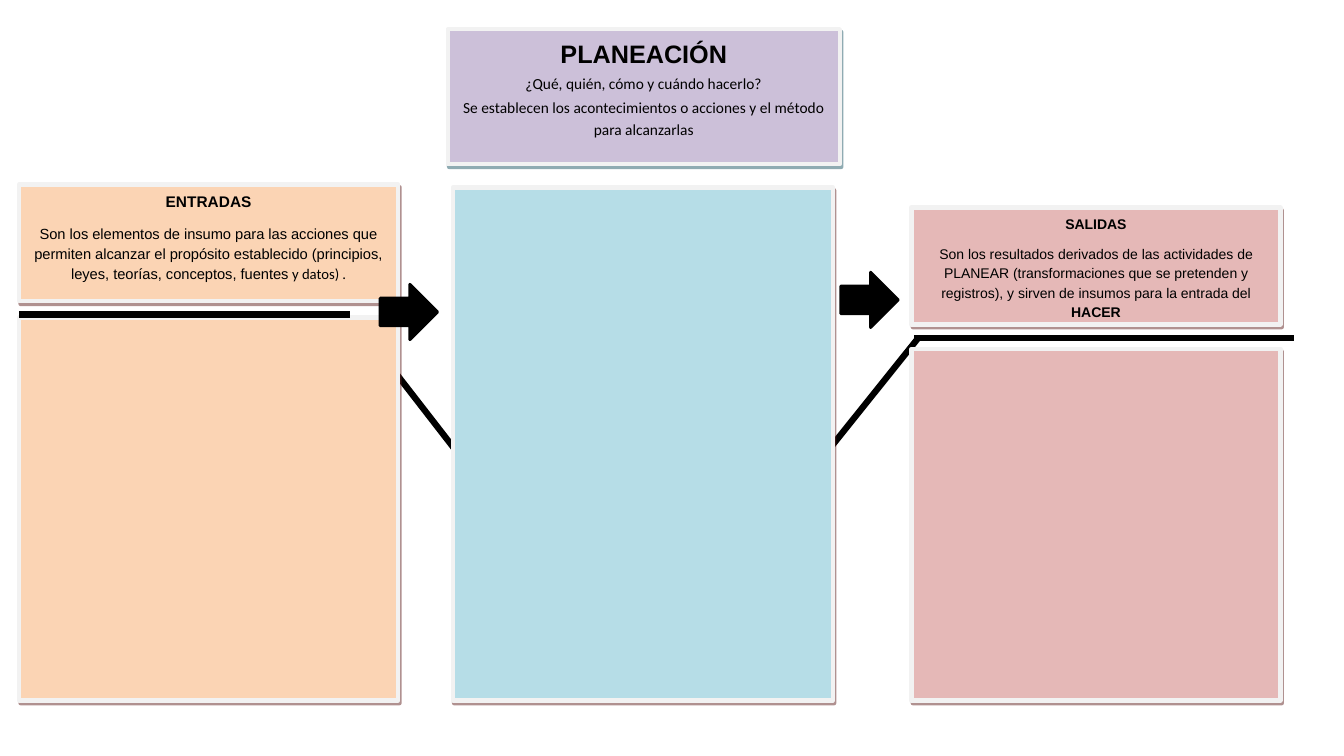
from dataclasses import dataclass

import pptx
import pptx.dml.color
import pptx.enum.shapes
import pptx.enum.text
import pptx.oxml
import pptx.oxml.ns
import pptx.util

Inches = pptx.util.Inches
RGBColor = pptx.dml.color.RGBColor
Kind = pptx.enum.shapes.MSO_SHAPE

BLACK = RGBColor(0x00, 0x00, 0x00)
FRAME = RGBColor(0xF2, 0xF2, 0xF2)
PEACH = RGBColor(0xFB, 0xD4, 0xB4)
ROSE = RGBColor(0xE5, 0xB8, 0xB7)
LILAC = RGBColor(0xCC, 0xC0, 0xD9)
AQUA = RGBColor(0xB6, 0xDD, 0xE7)
MAROON = RGBColor(0x63, 0x24, 0x23)
TEAL = RGBColor(0x20, 0x58, 0x67)


@dataclass(frozen=True)
class Run:
    text: str
    size: float
    bold: bool = False
    font: str = "Arial"


@dataclass(frozen=True)
class Para:
    runs: tuple[Run, ...]
    before: float = 0


@dataclass(frozen=True)
class Box:
    left: float
    top: float
    width: float
    height: float
    fill: RGBColor
    shade: RGBColor = MAROON
    paras: tuple[Para, ...] = ()


@dataclass(frozen=True)
class Line:
    x1: float
    y1: float
    x2: float
    y2: float


@dataclass(frozen=True)
class Arrow:
    left: float
    top: float


HEADS = (
    Box(0.19, 1.83, 3.76, 1.16, PEACH, paras=(
        Para((Run("ENTRADAS", 11, True),)),
        Para((
            Run("Son los elementos de insumo para las acciones que permiten "
                "alcanzar el propósito establecido (principios, leyes, "
                "teorías, conceptos, fuentes", 10.5),
            Run(" y datos) .", 10.5, font="Calibri"),
        ), 8),
    )),
    Box(9.04, 2.06, 3.66, 1.16, ROSE, paras=(
        Para((Run("SALIDAS", 10, True),)),
        Para((
            Run("Son los resultados derivados de las actividades de PLANEAR "
                "(transformaciones que se pretenden y registros), y sirven "
                "de insumos para la entrada del ", 10),
            Run("HACER", 10, True),
        ), 8),
    )),
    Box(4.44, 0.29, 3.89, 1.34, LILAC, TEAL, (
        Para((Run("PLANEACIÓN", 18, True),)),
        Para((Run("¿Qué, quién, cómo y cuándo hacerlo?", 11,
                  font="Calibri"),), 2),
        Para((Run("Se establecen los acontecimientos o acciones y el método "
                  "para alcanzarlas", 11, font="Calibri"),), 2),
    )),
)
LINKS = (Line(6.3, 6.86, 9.11, 3.35), Line(3.56, 3.23, 6.28, 6.74))
PANELS = (
    Box(0.19, 3.15, 3.76, 3.8, PEACH),
    Box(4.49, 1.86, 3.77, 5.09, AQUA),
    Box(9.04, 3.46, 3.66, 3.49, ROSE),
)
RULES = (Line(0.19, 3.12, 3.47, 3.12), Line(9.07, 3.35, 12.83, 3.35))
ARROWS = (Arrow(3.77, 2.82), Arrow(8.34, 2.7))


def add_shade(shape, color: RGBColor) -> None:
    shape.shadow.inherit = False
    effects = shape._element.spPr.find(pptx.oxml.ns.qn("a:effectLst"))
    effects.append(pptx.oxml.parse_xml(
        f'<a:outerShdw {pptx.oxml.ns.nsdecls("a")} blurRad="0" '
        f'dist="{pptx.util.Pt(2.2)}" dir="3780000" algn="ctr" '
        f'rotWithShape="0"><a:srgbClr val="{color}">'
        '<a:alpha val="49000"/></a:srgbClr></a:outerShdw>'))


def write(frame, paras: tuple[Para, ...]) -> None:
    frame.word_wrap = True
    frame.vertical_anchor = pptx.enum.text.MSO_ANCHOR.TOP
    for index, para in enumerate(paras):
        item = frame.add_paragraph() if index else frame.paragraphs[0]
        item.alignment = pptx.enum.text.PP_ALIGN.CENTER
        item.line_spacing = 1.15
        item.space_before = pptx.util.Pt(para.before)
        for part in para.runs:
            run = item.add_run()
            run.text = part.text
            run.font.size = pptx.util.Pt(part.size)
            run.font.bold = part.bold
            run.font.name = part.font
            run.font.color.rgb = BLACK


def paint(shape, fill: RGBColor, edge: RGBColor, width: float) -> None:
    shape.fill.solid()
    shape.fill.fore_color.rgb = fill
    shape.line.color.rgb = edge
    shape.line.width = pptx.util.Pt(width)


def draw_box(slide, box: Box) -> None:
    shape = slide.shapes.add_shape(
        Kind.RECTANGLE, Inches(box.left), Inches(box.top),
        Inches(box.width), Inches(box.height))
    paint(shape, box.fill, FRAME, 3)
    add_shade(shape, box.shade)
    if box.paras:
        write(shape.text_frame, box.paras)


def draw_line(slide, line: Line) -> None:
    shape = slide.shapes.add_connector(
        pptx.enum.shapes.MSO_CONNECTOR.STRAIGHT,
        Inches(line.x1), Inches(line.y1), Inches(line.x2), Inches(line.y2))
    shape.line.color.rgb = BLACK
    shape.line.width = pptx.util.Pt(4.5)
    shape._element.spPr.append(pptx.oxml.parse_xml(
        f'<a:effectLst {pptx.oxml.ns.nsdecls("a")}/>'))


def draw_arrow(slide, arrow: Arrow) -> None:
    shape = slide.shapes.add_shape(
        Kind.RIGHT_ARROW, Inches(arrow.left), Inches(arrow.top),
        Inches(0.57), Inches(0.55))
    paint(shape, BLACK, BLACK, 2)
    shape.shadow.inherit = False


def main() -> None:
    deck = pptx.Presentation()
    deck.slide_width = Inches(13.33)
    deck.slide_height = Inches(7.5)
    slide = deck.slides.add_slide(deck.slide_layouts[6])
    for box in HEADS:
        draw_box(slide, box)
    for line in LINKS:
        draw_line(slide, line)
    for box in PANELS:
        draw_box(slide, box)
    for line in RULES:
        draw_line(slide, line)
    for arrow in ARROWS:
        draw_arrow(slide, arrow)
    deck.save("out.pptx")


if __name__ == "__main__":
    main()
